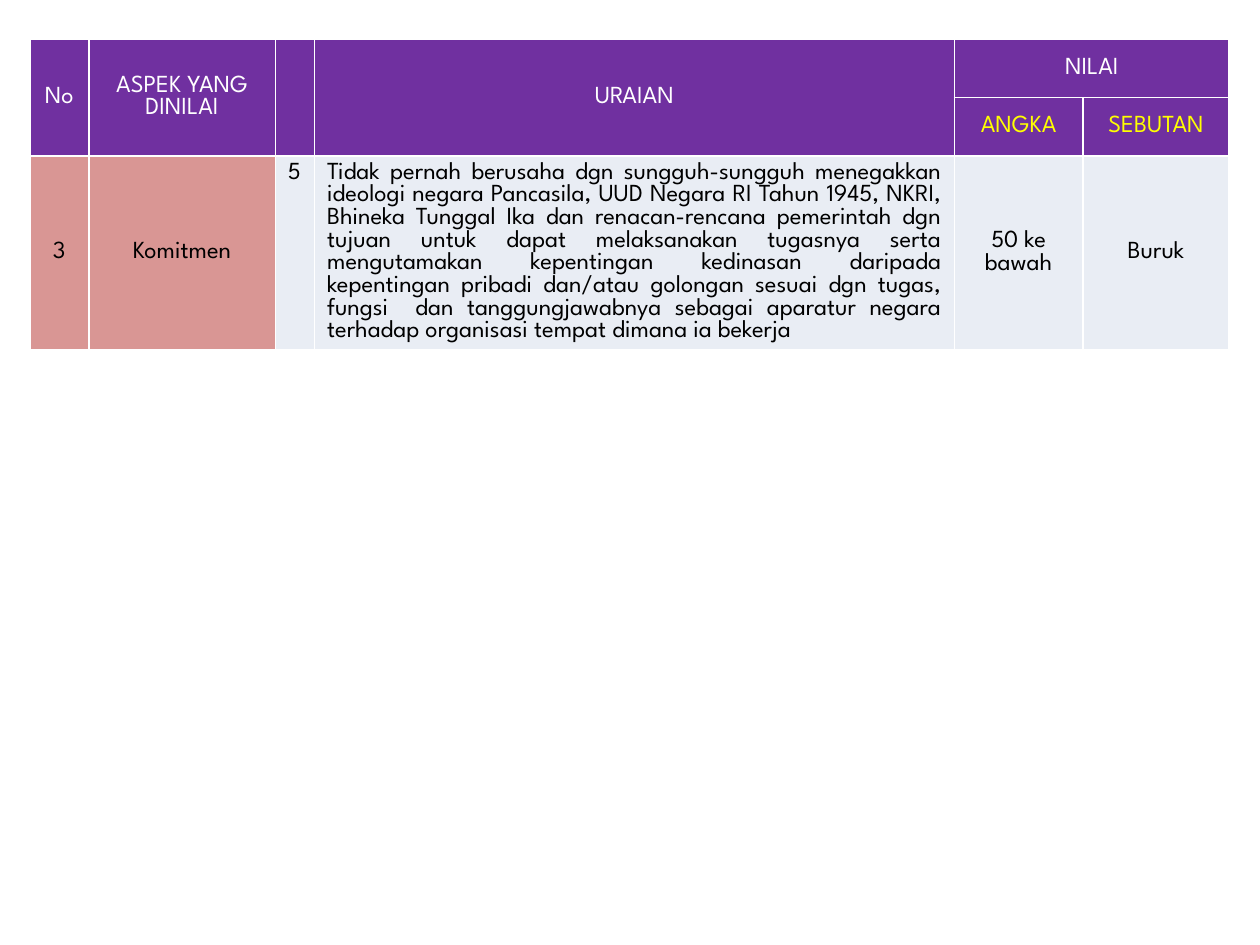
from pptx import Presentation
from pptx.dml.color import RGBColor
from pptx.enum.text import MSO_ANCHOR, PP_ALIGN
from pptx.util import Cm, Pt

COLORS = {
    "header": "7030A0",
    "aspect": "D99694",
    "body": "E9EDF4",
    "white": "FFFFFF",
    "yellow": "FFFF00",
    "black": "000000",
}
COLUMN_WIDTHS = [1.19, 3.76, 0.79, 12.9, 2.59, 2.95]
ROW_HEIGHTS = [1.17, 1.17, 2.62]
DESCRIPTION = (
    "Tidak pernah berusaha dgn sungguh-sungguh menegakkan ideologi negara "
    "Pancasila, UUD Negara RI Tahun 1945, NKRI, Bhineka Tunggal Ika dan "
    "renacan-rencana pemerintah dgn tujuan untuk dapat melaksanakan tugasnya "
    "serta mengutamakan kepentingan kedinasan daripada kepentingan pribadi "
    "dan/atau golongan sesuai dgn tugas, fungsi  dan tanggungjawabnya sebagai "
    "aparatur negara terhadap organisasi tempat dimana ia bekerja"
)


def write_cell(cell, text, *, fill, color="black",
               align=PP_ALIGN.CENTER, anchor=MSO_ANCHOR.MIDDLE):
    cell.fill.solid()
    cell.fill.fore_color.rgb = RGBColor.from_string(COLORS[fill])
    cell.vertical_anchor = anchor
    paragraph = cell.text_frame.paragraphs[0]
    paragraph.alignment = align
    paragraph.font.size = Pt(14)
    if text:
        run = paragraph.add_run()
        run.text = text
        run.font.name = "League Spartan"
        run.font.size = Pt(14)
        run.font.bold = False
        run.font.color.rgb = RGBColor.from_string(COLORS[color])


presentation = Presentation()
presentation.slide_width = Cm(25.4)
presentation.slide_height = Cm(19.05)
slide = presentation.slides.add_slide(presentation.slide_layouts[6])

table = slide.shapes.add_table(
    len(ROW_HEIGHTS), len(COLUMN_WIDTHS), Cm(0.6), Cm(0.8),
    Cm(sum(COLUMN_WIDTHS)), Cm(sum(ROW_HEIGHTS)),
).table
table.horz_banding = False
for column, width in zip(table.columns, COLUMN_WIDTHS):
    column.width = Cm(width)
for row, height in zip(table.rows, ROW_HEIGHTS):
    row.height = Cm(height)

# Header: four columns span both rows, NILAI spans its two subcolumns
for column_index in range(4):
    table.cell(0, column_index).merge(table.cell(1, column_index))
table.cell(0, 4).merge(table.cell(0, 5))
for column_index, heading in enumerate(["No", "ASPEK YANG DINILAI", "", "URAIAN", "NILAI"]):
    write_cell(table.cell(0, column_index), heading, fill="header", color="white")
for column_index, heading in enumerate(["ANGKA", "SEBUTAN"], start=4):
    write_cell(table.cell(1, column_index), heading, fill="header", color="yellow")

# Assessed aspect
for column_index, text in enumerate(["3", "Komitmen"]):
    write_cell(table.cell(2, column_index), text, fill="aspect")
write_cell(table.cell(2, 2), "5", fill="body",
           align=PP_ALIGN.LEFT, anchor=MSO_ANCHOR.TOP)
write_cell(table.cell(2, 3), DESCRIPTION, fill="body",
           align=PP_ALIGN.JUSTIFY, anchor=MSO_ANCHOR.TOP)
for column_index, text in enumerate(["50 ke bawah", "Buruk"], start=4):
    write_cell(table.cell(2, column_index), text, fill="body")

presentation.save("out.pptx")
